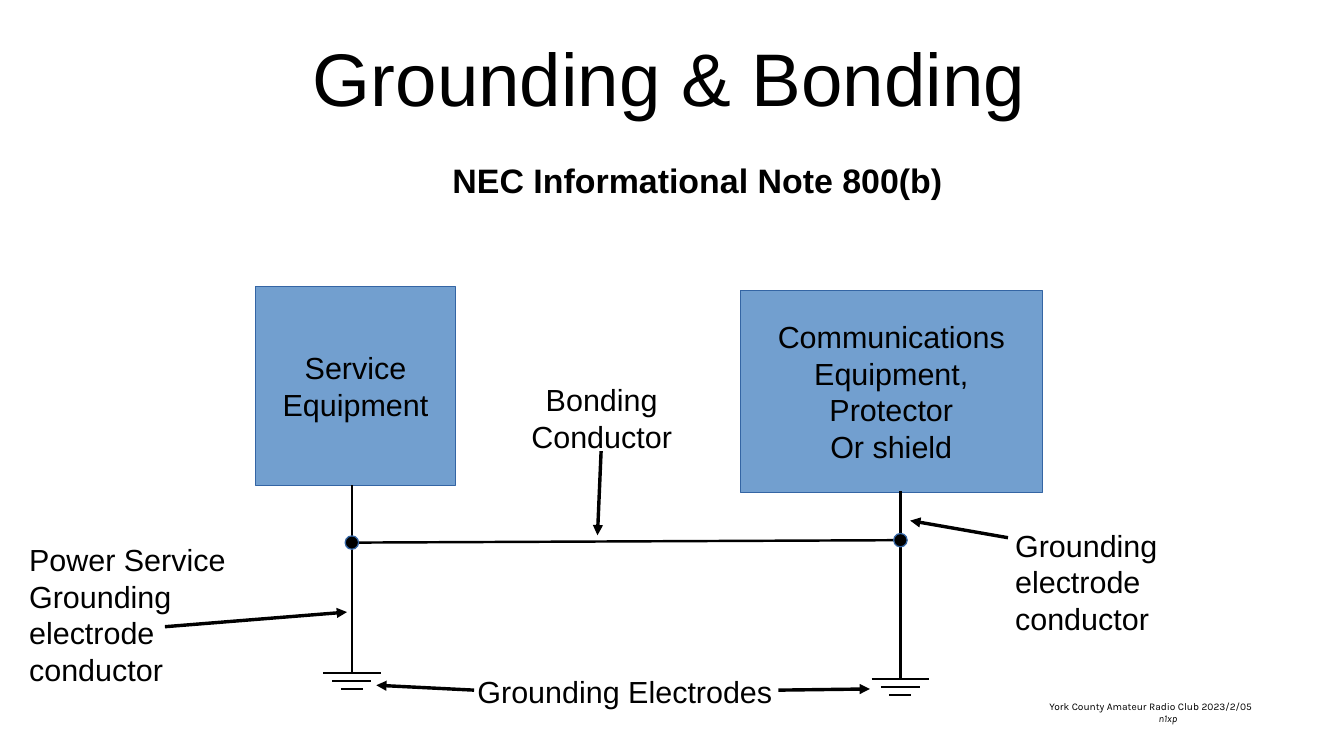
from lxml import etree
from pptx import Presentation
from pptx.dml.color import RGBColor
from pptx.enum.shapes import MSO_CONNECTOR, MSO_SHAPE
from pptx.enum.text import MSO_ANCHOR, MSO_AUTO_SIZE, PP_ALIGN
from pptx.oxml.ns import qn
from pptx.util import Inches, Pt

LEFT, CENTER = PP_ALIGN.LEFT, PP_ALIGN.CENTER
TOP, MIDDLE = MSO_ANCHOR.TOP, MSO_ANCHOR.MIDDLE
RECTANGLE, OVAL = MSO_SHAPE.RECTANGLE, MSO_SHAPE.OVAL
STRAIGHT, NO_FIT = MSO_CONNECTOR.STRAIGHT, MSO_AUTO_SIZE.NONE

COLORS = {"ink": "000000", "equipment": "729FCF", "edge": "3465A4"}
COLUMNS, ROWS = 110, 62
WIRE, HAIRLINE = 1.45, 0
TITLE_ONLY = 5


class Diagram:
    def __init__(self, deck, font="Arial", size=18):
        self.slide = deck.slides.add_slide(deck.slide_layouts[TITLE_ONLY])
        self.column = deck.slide_width / COLUMNS
        self.row = deck.slide_height / ROWS
        self.font, self.size = font, size

    def place(self, *cells):
        units = (self.column, self.row) * 2
        return [round(cell * unit) for cell, unit in zip(cells, units)]

    def color(self, name):
        return RGBColor.from_string(COLORS[name])

    def fill_text(self, holder, lines, align=LEFT, anchor=TOP, size=None,
                  font=None, bold=False, insets=(0.1, 0.05)):
        frame = holder.text_frame
        frame.word_wrap, frame.auto_size = True, NO_FIT
        frame.vertical_anchor = anchor
        frame.margin_left = frame.margin_right = Inches(insets[0])
        frame.margin_top = frame.margin_bottom = Inches(insets[1])
        frame.text = "\n".join(lines)
        for paragraph in frame.paragraphs:
            paragraph.alignment = align
            paragraph.font.name = font or self.font
            paragraph.font.size = Pt(size or self.size)
            paragraph.font.bold = bold
            paragraph.font.color.rgb = self.color("ink")
        return frame.paragraphs

    def title(self, box, text):
        heading = self.slide.shapes.title
        heading.left, heading.top, heading.width, heading.height = self.place(*box)
        self.fill_text(heading, [text], CENTER, size=44)

    def label(self, box, lines, **style):
        holder = self.slide.shapes.add_textbox(*self.place(*box))
        return self.fill_text(holder, lines, **style)

    def shape(self, kind, box, fill):
        outline = self.slide.shapes.add_shape(kind, *self.place(*box))
        outline.shadow.inherit = False
        outline.fill.solid()
        outline.fill.fore_color.rgb = self.color(fill)
        outline.line.color.rgb = self.color("edge")
        outline.line.width = Pt(0.75)
        return outline

    def equipment(self, box, lines):
        self.fill_text(self.shape(RECTANGLE, box, "equipment"), lines, CENTER, MIDDLE)

    def junction(self, x, y, size=1.1):
        self.shape(OVAL, (x - size / 2, y - size / 2, size, size), "ink")

    def wire(self, start, end, width=WIRE):
        wire = self.slide.shapes.add_connector(STRAIGHT, *self.place(*start, *end))
        wire.line.color.rgb = self.color("ink")
        wire.line.width = Pt(width)
        etree.SubElement(wire._element.spPr, qn("a:effectLst"))
        return wire

    def pointer(self, tip, tail):
        outline = self.wire(tip, tail, HAIRLINE)._element.spPr.find(qn("a:ln"))
        etree.SubElement(outline, qn("a:headEnd"), type="triangle")

    def ground(self, x, top, bottom):
        self.wire((x, top), (x, bottom))
        for level, half in enumerate((2.35, 1.6, 0.9)):
            y = bottom + 0.65 * level
            self.wire((x - half, y), (x + half, y))


def main():
    deck = Presentation()
    deck.slide_width, deck.slide_height = Inches(11.02), Inches(6.2)
    diagram = Diagram(deck)

    diagram.title((13.4, 2.1, 82.8, 7.8), "Grounding & Bonding")
    diagram.label((18.6, 12.6, 77, 4.1), ["NEC Informational Note 800(b)"],
                  align=CENTER, size=20, bold=True)

    diagram.equipment((20.9, 23.5, 16.4, 16.3), ["Service", "Equipment"])
    diagram.equipment((60.6, 23.8, 24.7, 16.6),
                      ["Communications", "Equipment,", "Protector", "Or shield"])

    service, communications = (28.8, 44.5), (73.7, 44.3)
    diagram.wire(service, communications)
    for node, top, bottom in ((service, 39.8, 55.2), (communications, 40.3, 55.7)):
        diagram.ground(node[0], top, bottom)
        diagram.junction(*node)

    diagram.label((42.4, 30.8, 13.7, 6.6), ["Bonding Conductor"], align=CENTER)
    diagram.label((1.4, 43.9, 24, 9.4),
                  ["Power Service", "Grounding electrode", "conductor"])
    diagram.label((82.1, 42.7, 24, 9.4), ["Grounding electrode", "conductor"])
    diagram.label((38.1, 54.7, 26.7, 6.6), ["Grounding Electrodes"])

    for tip, tail in (((48.9, 43.9), (49.2, 37)),
                      ((28.4, 50.2), (13.5, 51.4)),
                      ((74.5, 42.7), (82.5, 44.1)),
                      ((30.8, 56.2), (38.8, 56.6)),
                      ((71.2, 56.5), (63.7, 56.6))):
        diagram.pointer(tip, tail)

    club, callsign = diagram.label(
        (85.5, 57.1, 20.2, 2.7), ["York County Amateur Radio Club 2023/2/05", "n1xp"],
        anchor=MIDDLE, size=6, font="Karla", insets=(0.04, 0.04))
    callsign.alignment = CENTER
    callsign.font.italic = True

    deck.save("out.pptx")


if __name__ == "__main__":
    main()
